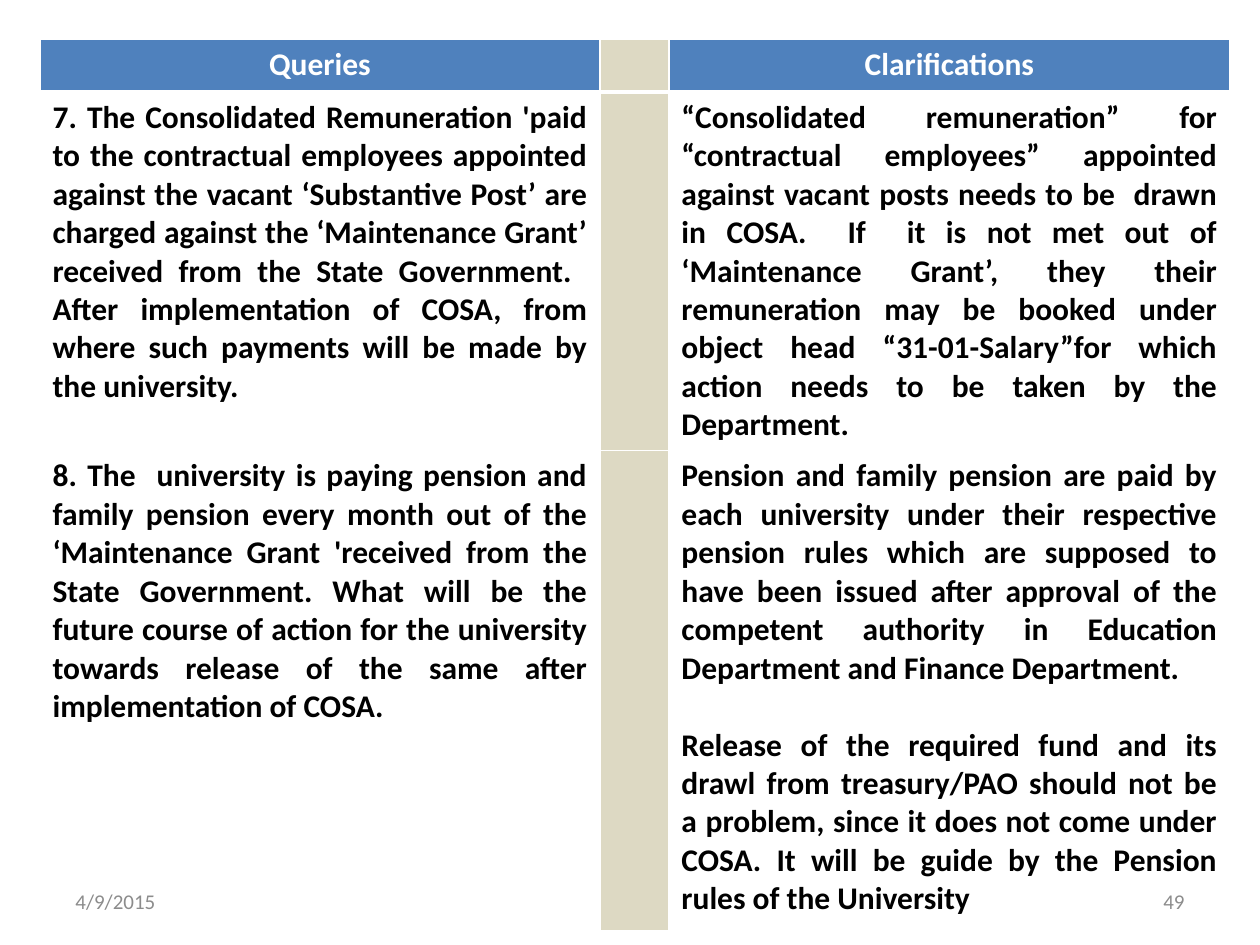
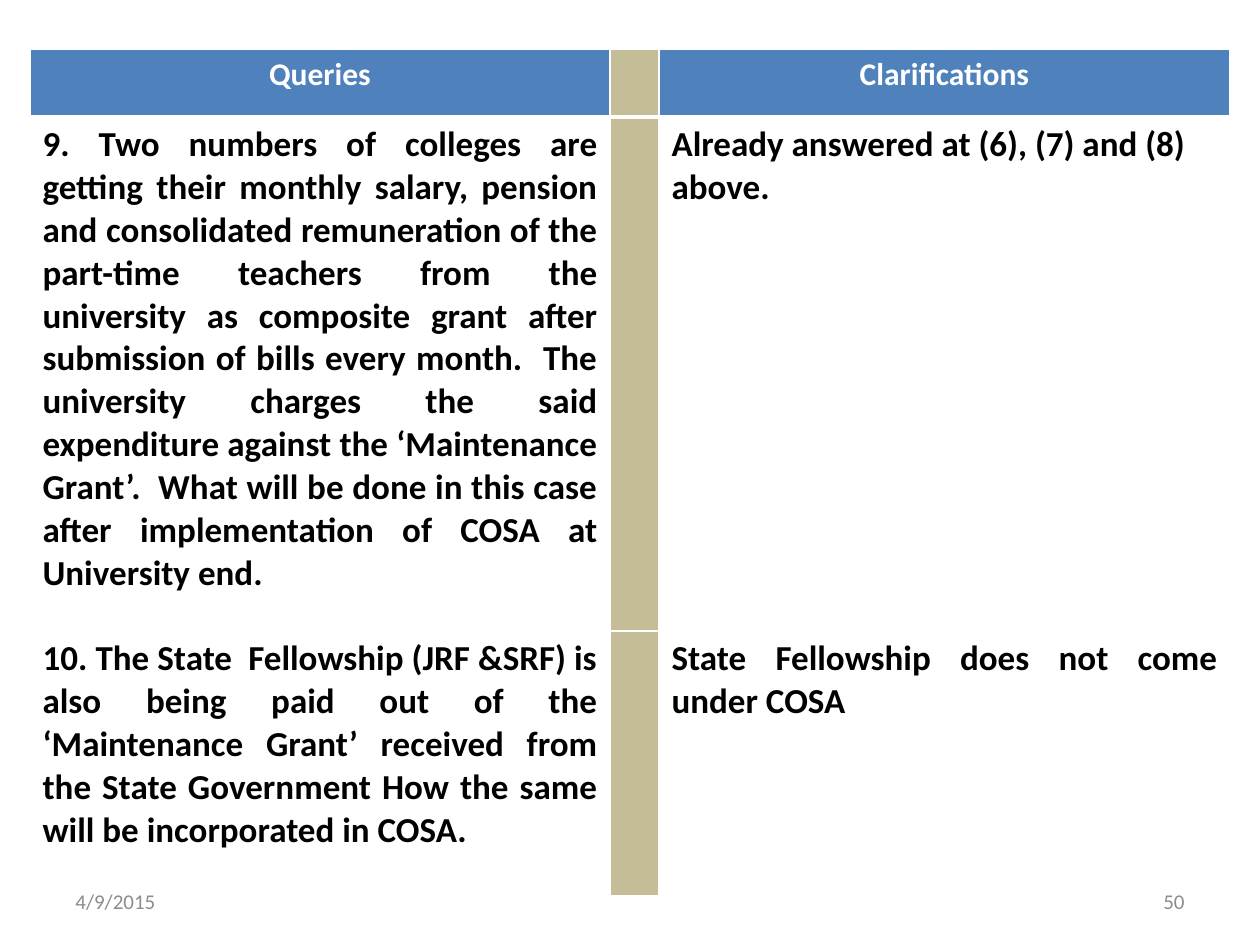
from lxml import etree
from pptx import Presentation
from pptx.dml.color import RGBColor
from pptx.enum import text
from pptx.oxml import ns
from pptx.util import Pt

SCALE = 914400 / 126
WIDE, HIGH = 1260, 945
FONT = "Calibri"
WHITE = RGBColor(0xFF, 0xFF, 0xFF)
BLACK = RGBColor(0, 0, 0)
BLUE = RGBColor(0x4F, 0x81, 0xBD)
SAND = RGBColor(0xDD, 0xD9, 0xC3)
KHAKI = RGBColor(0xC4, 0xBD, 0x97)
GREY = RGBColor(0x8C, 0x8C, 0x8C)
LEFT, MID = text.PP_ALIGN.LEFT, text.PP_ALIGN.CENTER
RIGHT, FULL = text.PP_ALIGN.RIGHT, text.PP_ALIGN.JUSTIFY
DATE = "4/9/2015"
HEADS = ("Queries", "Clarifications")

QUERY_7 = (
    "7. The Consolidated Remuneration 'paid to the contractual employees "
    "appointed against the vacant ‘Substantive Post’ are charged against the "
    "‘Maintenance Grant’ received from the State Government.  After "
    "implementation of COSA, from where such payments will be made by the "
    "university.")
REPLY_7 = (
    "“Consolidated remuneration” for “contractual employees” appointed "
    "against vacant posts needs to be  drawn in COSA.  If  it is not met out "
    "of ‘Maintenance Grant’, they their remuneration may be booked under "
    "object head “31-01-Salary”for which action needs to be taken by the "
    "Department.")
QUERY_8 = (
    "8. The  university is paying pension and family pension every month out "
    "of the ‘Maintenance Grant 'received from the State Government. What "
    "will be the future course of action for the university towards release "
    "of the same after implementation of COSA.")
REPLY_8 = (
    "Pension and family pension are paid by each university under their "
    "respective pension rules which are supposed to have been issued after "
    "approval of the competent authority in Education Department and Finance "
    "Department.")
FUND_8 = (
    "Release of the required fund and its drawl from treasury/PAO should not "
    "be a problem, since it does not come under COSA. It will be guide by "
    "the Pension rules of the University")
QUERY_9 = (
    "9. Two numbers of colleges are getting their monthly salary, pension "
    "and consolidated remuneration of the part-time teachers from the "
    "university as composite grant after submission of bills every month.  "
    "The university charges the said expenditure against the ‘Maintenance "
    "Grant’.  What will be done in this case after implementation of COSA at "
    "University end.")
REPLY_9 = "Already answered at (6), (7) and (8) above."
QUERY_10 = (
    "10. The State  Fellowship (JRF &SRF) is also being paid out of the "
    "‘Maintenance Grant’ received from the State Government How the same "
    "will be incorporated in COSA.")
REPLY_10 = "State Fellowship does not come under COSA"


def px(n):
    return round(n * SCALE)


def write(frame, lines, size, color, align, bold=False):
    """Write one paragraph per line, set a blank line's height apart."""
    for i, line in enumerate(lines):
        para = frame.add_paragraph() if i else frame.paragraphs[0]
        para.alignment = align
        if i:
            para.space_before = Pt(size * 1.22)
        run = para.add_run()
        run.text = line
        font = run.font
        font.name, font.size, font.bold = FONT, Pt(size), bold
        font.color.rgb = color


def edge(cell, top, bottom):
    """Give a cell white borders; widths are points."""
    props = cell._tc.get_or_add_tcPr()
    sides = (("lnL", 1), ("lnR", 1), ("lnT", top), ("lnB", bottom))
    for i, (side, width) in enumerate(sides):
        line = etree.Element(ns.qn("a:" + side), w=str(Pt(width)))
        fill = etree.SubElement(line, ns.qn("a:solidFill"))
        etree.SubElement(fill, ns.qn("a:srgbClr"), val=str(WHITE))
        props.insert(i, line)


def paint(cell, color):
    cell.fill.solid()
    cell.fill.fore_color.rgb = color


def grid(slide, left, top, cols, rows, pairs, strip, size):
    """Add the table of queries and replies, parted by a coloured strip.

    Each pair holds a query, the lines of its reply and the reply's alignment.
    """
    frame = slide.shapes.add_table(len(rows), len(cols), px(left), px(top),
                                   px(sum(cols)), px(sum(rows)))
    table = frame.table
    table.first_row = table.horz_banding = False
    for col, width in zip(table.columns, cols):
        col.width = px(width)
    for i, (row, height) in enumerate(zip(table.rows, rows)):
        row.height = px(height)
        fills = (BLUE, strip, BLUE) if i == 0 else (WHITE, strip, WHITE)
        for cell, fill in zip(row.cells, fills):
            paint(cell, fill)
            edge(cell, 3 if i == 1 else 1, 3 if i == 0 else 1)
    for n, head in enumerate(HEADS):
        write(table.cell(0, 2 * n).text_frame, [head], 18, WHITE, MID, True)
    for i, (query, reply, align) in enumerate(pairs, 1):
        write(table.cell(i, 0).text_frame, [query], size, BLACK, FULL, True)
        write(table.cell(i, 2).text_frame, reply, size, BLACK, align, True)


def note(slide, left, words, align):
    box = slide.shapes.add_textbox(px(left), px(876), px(294), px(50))
    frame = box.text_frame
    frame.word_wrap = True
    frame.vertical_anchor = text.MSO_ANCHOR.MIDDLE
    write(frame, [words], 12, GREY, align)


def foot(slide, number):
    note(slide, 63, DATE, LEFT)
    note(slide, 903, str(number), RIGHT)


def main():
    deck = Presentation()
    deck.slide_width, deck.slide_height = px(WIDE), px(HIGH)
    blank = deck.slide_layouts[6]

    slide = deck.slides.add_slide(blank)
    grid(slide, 40, 39, (560, 69, 561), (53, 358, 480),
         ((QUERY_7, [REPLY_7], FULL), (QUERY_8, [REPLY_8, FUND_8], FULL)),
         SAND, 18)
    foot(slide, 49)

    slide = deck.slides.add_slide(blank)
    grid(slide, 30, 49, (580, 49, 571), (68, 514, 265),
         ((QUERY_9, [REPLY_9], LEFT), (QUERY_10, [REPLY_10], FULL)),
         KHAKI, 20)
    foot(slide, 50)

    deck.save("out.pptx")


if __name__ == "__main__":
    main()
